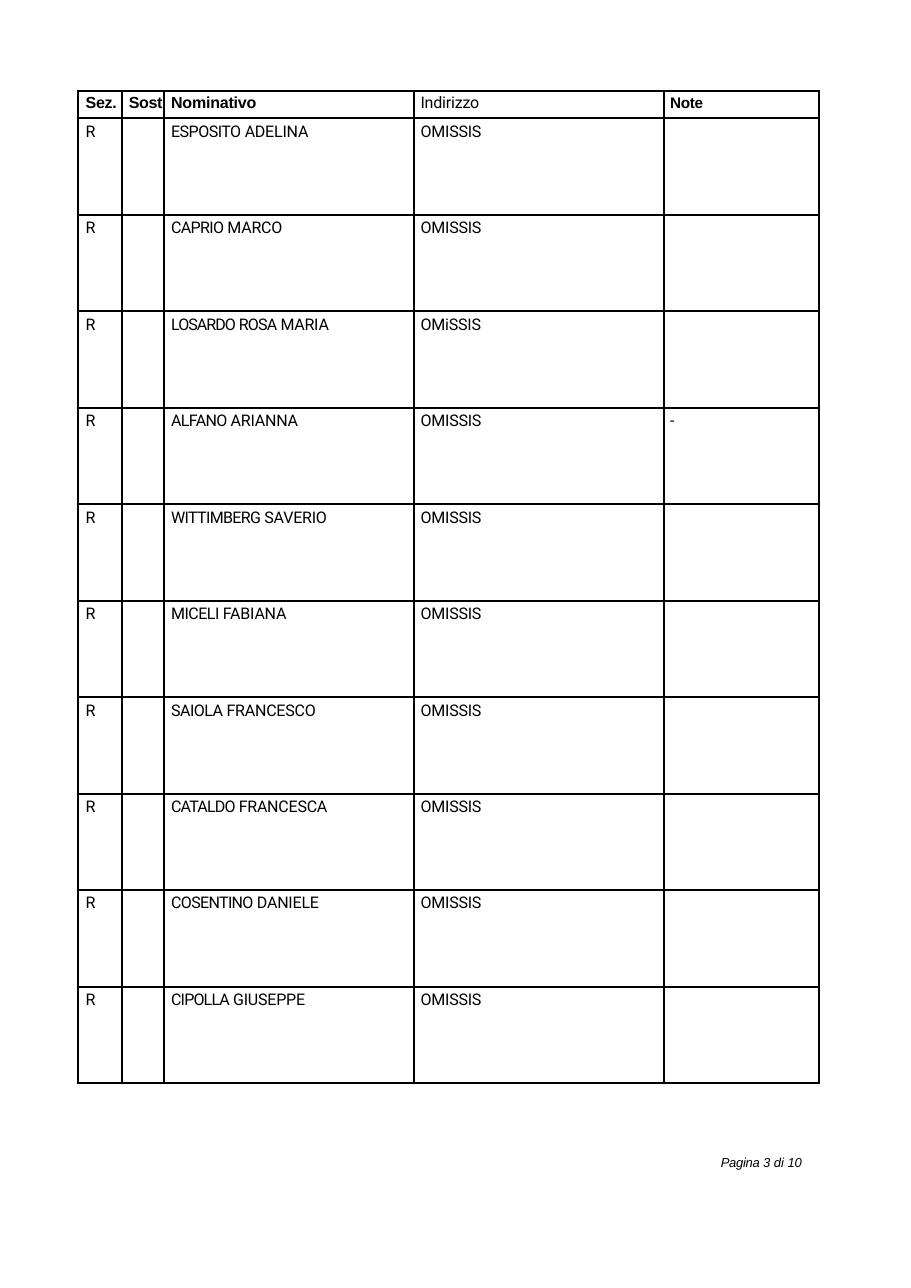
import pptx
import pptx.dml.color
import pptx.util
from lxml import etree
from pptx.oxml.ns import qn

Pt = pptx.util.Pt

# Text, font, size, letter spacing, top margin
HEADERS = [("Sez.", "Arial", 10.5, -0.2, 1.5), ("Sost", "Arial", 10.5, -0.2, 1.5),
           ("Nominativo", "Arial", 10.5, -0.1, 1.5),
           ("Indirizzo", "Roboto", 10.5, -0.1, 1.5), ("Note", "Arial", 10, -0.2, 2)]
# Surname and other names with their spacing, last name, address, note
PEOPLE = [
    ([("ESPOSITO ", -0.3)], "ADELINA", "OMISSIS", ""),
    ([("CAPRIO ", -0.4)], "MARCO", "OMISSIS", ""),
    ([("LOSARDO ", -0.6), ("ROSA ", -0.5)], "MARIA", "OMiSSIS", ""),
    ([("ALFANO ", -0.4)], "ARIANNA", "OMISSIS", "-"),
    ([("WITTIMBERG ", -0.4)], "SAVERIO", "OMISSIS", ""),
    ([("MICELI ", -0.3)], "FABIANA", "OMISSIS", ""),
    ([("SAIOLA ", -0.3)], "FRANCESCO", "OMISSIS", ""),
    ([("CATALDO ", -0.5)], "FRANCESCA", "OMISSIS", ""),
    ([("COSENTINO ", -0.4)], "DANIELE", "OMISSIS", ""),
    ([("CIPOLLA ", -0.5)], "GIUSEPPE", "OMISSIS", ""),
]
PAGE_NUMBER = [("Pagina ", -0.2), ("3 di ", 0), ("10", -0.2)]

PAGE_WIDTH, PAGE_HEIGHT = 596, 842.5
TABLE_LEFT, TABLE_TOP = 51.1, 59.8
COLUMN_WIDTHS = [28.8, 27.4, 163.5, 163.5, 101.4]
CELL_INDENTS = [5, 4.4, 4.7, 4.4, 4.2]
HEADER_HEIGHT, ROW_HEIGHT = 17.7, 63.1
BLACK = "000000"


def color(value):
    return pptx.dml.color.RGBColor.from_string(value)


def write(para, spans, font_name, size, bold=False, italic=False):
    """Fill a paragraph with (text, letter spacing in points) spans."""
    font = para.font
    font.name, font.size = font_name, Pt(size)
    font.bold, font.italic = bold, italic
    font.color.rgb = color(BLACK)
    for text, spacing in spans:
        span = para.add_run()
        span.text = text
        span._r.get_or_add_rPr().set("spc", str(round(spacing * 100)))


def add_borders(cell, width=1.5):
    properties = cell._tc.get_or_add_tcPr()
    for side in ("lnL", "lnR", "lnT", "lnB"):
        line = etree.SubElement(properties, qn("a:" + side), w=str(int(Pt(width))))
        fill = etree.SubElement(line, qn("a:solidFill"))
        etree.SubElement(fill, qn("a:srgbClr"), val=BLACK)


def add_register(page):
    height = HEADER_HEIGHT + ROW_HEIGHT * len(PEOPLE)
    table = page.shapes.add_table(
        len(PEOPLE) + 1, len(HEADERS), Pt(TABLE_LEFT), Pt(TABLE_TOP),
        Pt(sum(COLUMN_WIDTHS)), Pt(height)).table
    table.first_row = table.horz_banding = False
    for column, width in zip(table.columns, COLUMN_WIDTHS):
        column.width = Pt(width)
    for index, row in enumerate(table.rows):
        row.height = Pt(ROW_HEIGHT if index else HEADER_HEIGHT)
        for cell, indent in zip(row.cells, CELL_INDENTS):
            cell.margin_left, cell.margin_top = Pt(indent), Pt(2.6)
            cell.margin_right = cell.margin_bottom = 0
            add_borders(cell)
            cell.fill.background()

    for column, (text, font_name, size, spacing, top) in enumerate(HEADERS):
        cell = table.cell(0, column)
        cell.margin_top = Pt(top)
        write(cell.text_frame.paragraphs[0], [(text, spacing)],
              font_name, size, bold=font_name == "Arial")
    for index, (first, last, address, note) in enumerate(PEOPLE, 1):
        entries = [[("R", -0.5)], [], first + [(last, -0.1)],
                   [(address, -0.1)], [(note, -0.5)] if note else []]
        for column, spans in enumerate(entries):
            write(table.cell(index, column).text_frame.paragraphs[0], spans, "Roboto", 10.5)


def add_page_number(page):
    box = page.shapes.add_textbox(Pt(470.9), Pt(754.4), Pt(55.5), Pt(12.2))
    frame = box.text_frame
    frame.word_wrap = True
    frame.margin_left, frame.margin_top = Pt(0.7), Pt(0.7)
    frame.margin_right = frame.margin_bottom = 0
    write(frame.paragraphs[0], PAGE_NUMBER, "Arial", 8.5, italic=True)


def main():
    deck = pptx.Presentation()
    deck.slide_width, deck.slide_height = Pt(PAGE_WIDTH), Pt(PAGE_HEIGHT)
    page = deck.slides.add_slide(deck.slide_layouts[6])
    add_register(page)
    add_page_number(page)
    deck.save("out.pptx")


if __name__ == "__main__":
    main()
